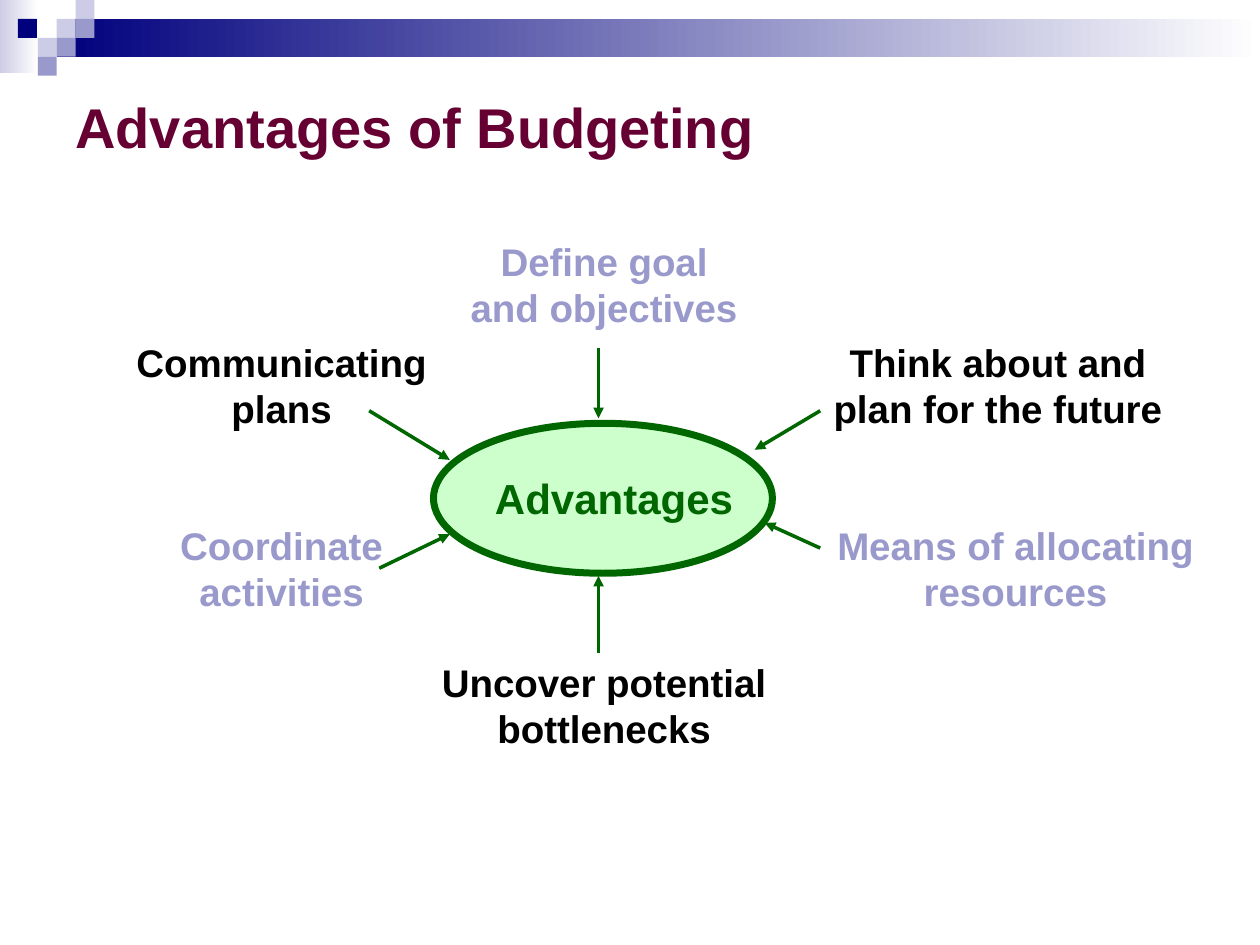
import pptx
import pptx.util
import pptx.dml.color
import pptx.enum.shapes
import pptx.enum.text
import pptx.oxml.ns
from lxml import etree

Inches, Pt = pptx.util.Inches, pptx.util.Pt
SHAPE = pptx.enum.shapes.MSO_SHAPE
ALIGN = pptx.enum.text.PP_ALIGN
ANCHOR = pptx.enum.text.MSO_ANCHOR

NAVY, LILAC, PALE, WHITE = "00007D", "9999CC", "CCCCE6", "FFFFFF"
MAROON, GREEN, MINT, BLACK = "660033", "006600", "CCFFCC", "000000"

# Centre and top of each text, then arrow start and end, in diagram columns and rows
ADVANTAGES = [
    ("Define goal\nand objectives", LILAC, (37.95, 0.4), 23.3, (37.5, 9.6), (37.5, 15.2)),
    ("Uncover potential\nbottlenecks", BLACK, (37.95, 33.8), 27.8, (37.5, 33.8), (37.5, 27.7)),
    ("Coordinate\nactivities", LILAC, (12.35, 22.9), 18.1, (20.1, 27.1), (25.7, 24.4)),
    ("Communicating\nplans", BLACK, (12.35, 8.4), 25.1, (19.3, 14.6), (25.7, 18.5)),
    ("Think about and\nplan for the future", BLACK, (69.2, 8.4), 28.2, (55.1, 14.6), (49.9, 17.7)),
    ("Means of allocating\nresources", LILAC, (70.6, 22.9), 30.4, (55.1, 25.5), (50.7, 23.5)),
]


def color(value):
    return pptx.dml.color.RGBColor.from_string(value)


def add_shape(s, kind, box, fill, fade_to=None, line=None):
    sp = s.shapes.add_shape(kind, *map(Inches, box))
    sp.shadow.inherit = False
    if fade_to:
        sp.fill.gradient()
        sp.fill.gradient_angle = 0
        for stop, value in zip(sp.fill.gradient_stops, (fill, fade_to)):
            stop.color.rgb = color(value)
    else:
        sp.fill.solid()
        sp.fill.fore_color.rgb = color(fill)
    if line:
        sp.line.color.rgb = color(line)
        sp.line.width = Pt(4)
    else:
        sp.line.fill.background()
    return sp


def set_text(sp, text, size, value, align=ALIGN.LEFT, anchor=ANCHOR.TOP, wrap=False):
    tf = sp.text_frame
    tf.word_wrap = wrap
    tf.vertical_anchor = anchor
    tf.text = text
    for p in tf.paragraphs:
        p.alignment = align
        for r in p.runs:
            r.font.name = "Arial"
            r.font.size = Pt(size)
            r.font.bold = True
            r.font.color.rgb = color(value)


def add_arrow(s, start, end):
    line = s.shapes.add_connector(
        pptx.enum.shapes.MSO_CONNECTOR.STRAIGHT, *map(Inches, (*start, *end)))
    line.line.color.rgb = color(GREEN)
    line.line.width = Pt(2)
    qn = pptx.oxml.ns.qn
    sp_pr = line.element.spPr
    etree.SubElement(sp_pr.find(qn("a:ln")), qn("a:tailEnd"), type="triangle")
    etree.SubElement(sp_pr, qn("a:effectLst"))


def add_banner(s, box):
    """Fading bars with a checker of squares, four squares high."""
    left, top, width, height = box
    cell = height / 4
    add_shape(s, SHAPE.RECTANGLE, (left, top, 2 * cell, 0.58), PALE, WHITE)
    add_shape(s, SHAPE.RECTANGLE,
              (left + 3 * cell, top + cell, width - 3 * cell, 2 * cell), NAVY, WHITE)
    squares = [(3, 1, PALE), (4, 0, PALE), (4, 1, LILAC), (2, 2, PALE),
               (0.95, 1, NAVY), (3, 2, LILAC), (2, 3, LILAC)]
    for col, row, value in squares:
        add_shape(s, SHAPE.RECTANGLE,
                  (left + col * cell, top + row * cell, cell, cell), value)


def add_title(s, box, text):
    sp = s.shapes.add_textbox(*map(Inches, box))
    set_text(sp, text, 32, MAROON, anchor=ANCHOR.MIDDLE, wrap=True)


def add_diagram(s, box):
    """Ellipse with arrows pointing at it, on a grid of 86 columns by 42 rows."""
    left, top, width, height = box
    col, row = width / 86, height / 42

    def point(x, y):
        return left + x * col, top + y * row

    def area(x, y, w, h):
        return *point(x, y), w * col, h * row

    add_shape(s, SHAPE.OVAL, area(24.4, 15.6, 26.9, 11.9), MINT, line=GREEN)
    label = add_shape(s, SHAPE.RECTANGLE, area(28.3, 19, 20.9, 5), MINT)
    set_text(label, "Advantages", 24, GREEN)

    for text, value, (center, y), w, start, end in ADVANTAGES:
        sp = s.shapes.add_textbox(*map(Inches, area(center - w / 2, y, w, 8.3)))
        set_text(sp, text, 22, value, ALIGN.CENTER)
        add_arrow(s, point(*start), point(*end))


def main():
    prs = pptx.Presentation()
    prs.slide_width, prs.slide_height = Inches(10), Inches(7.5)
    s = prs.slides.add_slide(prs.slide_layouts[6])
    add_banner(s, (0, 0, 10, 0.6))
    add_title(s, (0.5, 0.5, 9, 1), "Advantages of Budgeting")
    add_diagram(s, (1, 1.8, 8.6, 4.2))
    prs.save("out.pptx")


if __name__ == "__main__":
    main()
